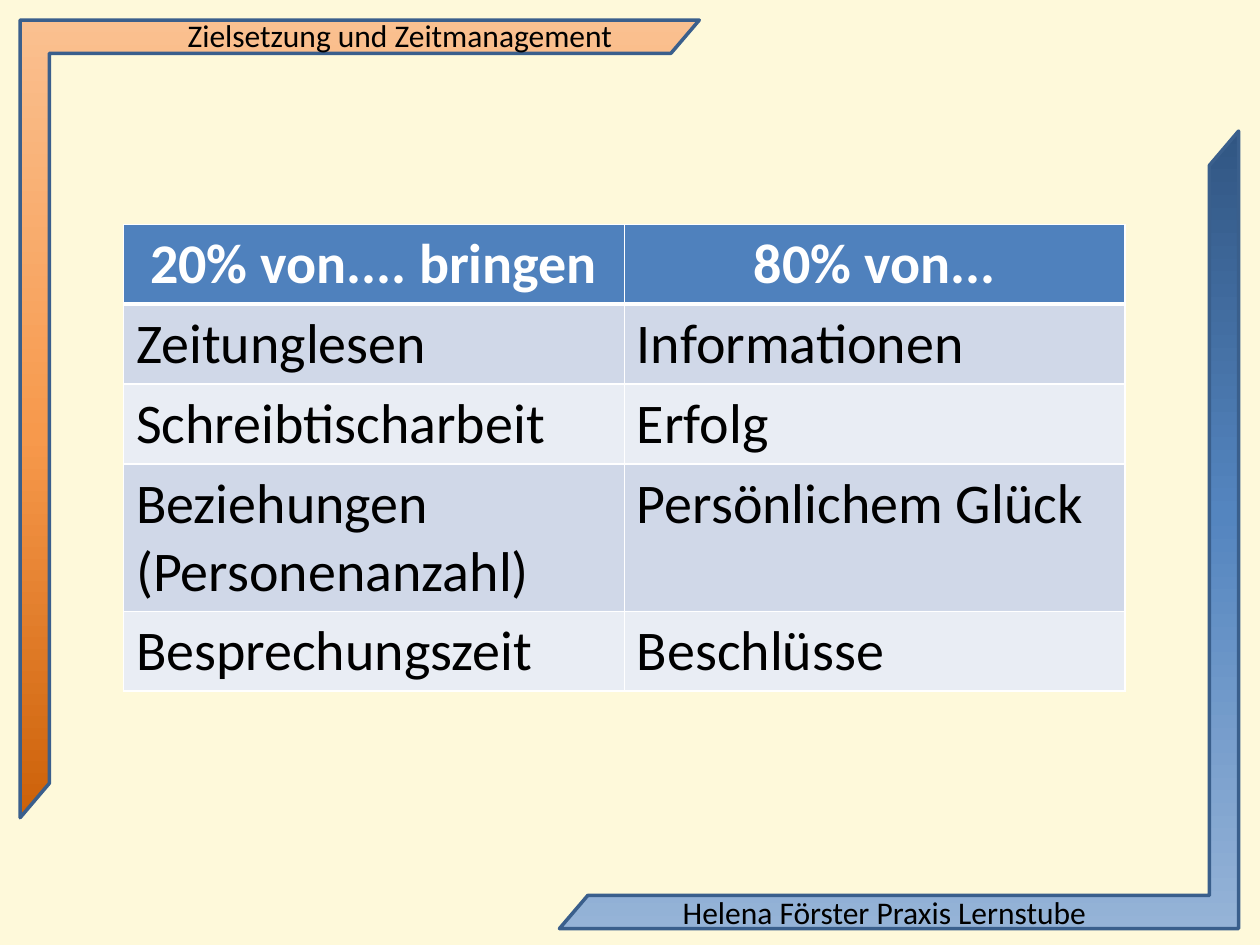
from copy import deepcopy
from dataclasses import dataclass

from lxml import etree
from pptx import Presentation
from pptx.dml.color import RGBColor
from pptx.enum.shapes import MSO_SHAPE
from pptx.enum.text import MSO_AUTO_SIZE, PP_ALIGN
from pptx.oxml.ns import qn
from pptx.util import Inches, Pt

HALF = MSO_SHAPE.HALF_FRAME
GROW = MSO_AUTO_SIZE.SHAPE_TO_FIT_TEXT
LEFT, CENTER = PP_ALIGN.LEFT, PP_ALIGN.CENTER


@dataclass(frozen=True)
class Theme:
    font: str = "Calibri"
    label: int = 18
    cell: int = 32
    back: str = "FEF9DA"
    ink: str = "000000"
    white: str = "FFFFFF"
    edge: str = "3A5F8C"
    head: str = "4F81BD"
    bands: tuple = ("D0D8E8", "E9EDF4")
    warm: tuple = ("CC6109", "F7994C", "FAC090")
    cool: tuple = ("315683", "5485BF", "95B3D7")
    stops: tuple = (0, 0.48, 1)


THEME = Theme()
ROWS = [
    ("20% von.... bringen", "80% von..."),
    ("Zeitunglesen", "Informationen"),
    ("Schreibtischarbeit", "Erfolg"),
    ("Beziehungen (Personenanzahl)", "Persönlichem Glück"),
    ("Besprechungszeit", "Beschlüsse"),
]
HEIGHTS = (0.63, 0.63, 0.63, 1.17, 0.63)


def rgb(code):
    return RGBColor.from_string(code)


def write(frame, text, size=THEME.label, color=THEME.ink, bold=False, align=LEFT):
    para = frame.paragraphs[0]
    para.alignment = align
    run = para.add_run()
    run.text = text
    font = run.font
    font.name, font.size, font.bold = THEME.font, Pt(size), bold
    font.color.rgb = rgb(color)


def shade(shape, colors):
    """Fill with a three-colour gradient running from bottom to top."""
    fill = shape.fill
    fill.gradient()
    fill.gradient_angle = 90
    stops = shape._element.spPr.find(".//" + qn("a:gsLst"))
    stops.append(deepcopy(stops[-1]))
    for stop, place, color in zip(fill.gradient_stops, THEME.stops, colors):
        stop.position = place
        stop.color.rgb = rgb(color)


def add_frame(slide, box, colors, turn=0):
    shape = slide.shapes.add_shape(HALF, *map(Inches, box))
    shape.adjustments[0], shape.adjustments[1] = 0.049, 0.043
    shape.rotation = turn
    shape.shadow.inherit = False
    shade(shape, colors)
    shape.line.color.rgb = rgb(THEME.edge)
    shape.line.width = Pt(2)


def add_label(slide, box, text):
    frame = slide.shapes.add_textbox(*map(Inches, box)).text_frame
    frame.word_wrap = False
    frame.auto_size = GROW
    write(frame, text)


def add_edges(cell, widths):
    """Draw white borders; they must stand before the fill in the cell."""
    props = cell._tc.get_or_add_tcPr()
    for spot, (side, width) in enumerate(widths.items()):
        line = etree.Element(qn("a:ln" + side), w=str(Pt(width)))
        solid = etree.SubElement(line, qn("a:solidFill"))
        etree.SubElement(solid, qn("a:srgbClr"), val=THEME.white)
        props.insert(spot, line)


def add_grid(slide, box):
    cols = len(ROWS[0])
    table = slide.shapes.add_table(len(ROWS), cols, *map(Inches, box)).table
    for col in table.columns:
        col.width = Inches(box[2] / cols)
    for r, texts in enumerate(ROWS):
        table.rows[r].height = Inches(HEIGHTS[r])
        head = r == 0
        for c, text in enumerate(texts):
            cell = table.cell(r, c)
            cell.fill.solid()
            cell.fill.fore_color.rgb = rgb(THEME.head if head else THEME.bands[(r - 1) % 2])
            write(cell.text_frame, text, size=THEME.cell, bold=head,
                  color=THEME.white if head else THEME.ink,
                  align=CENTER if head else LEFT)
            add_edges(cell, {"L": 1, "R": 1, "T": 3 if r == 1 else 1, "B": 3 if head else 1})


def main():
    deck = Presentation()
    deck.slide_width, deck.slide_height = Inches(10), Inches(7.5)
    slide = deck.slides.add_slide(deck.slide_layouts[6])
    slide.background.fill.solid()
    slide.background.fill.fore_color.rgb = rgb(THEME.back)

    # Corner frames
    add_frame(slide, (0.16, 0.16, 5.39, 6.33), THEME.warm)
    add_frame(slide, (4.44, 1.04, 5.39, 6.33), THEME.cool, turn=180)

    # Header and footer
    add_label(slide, (1.39, 0.08, 3.61, 0.4), "Zielsetzung und Zeitmanagement")
    add_label(slide, (5.32, 7.04, 3.62, 0.4), "Helena Förster Praxis Lernstube")

    # Table of the 20/80 rule
    add_grid(slide, (0.98, 1.78, 7.95, sum(HEIGHTS)))

    deck.save("out.pptx")


if __name__ == "__main__":
    main()
